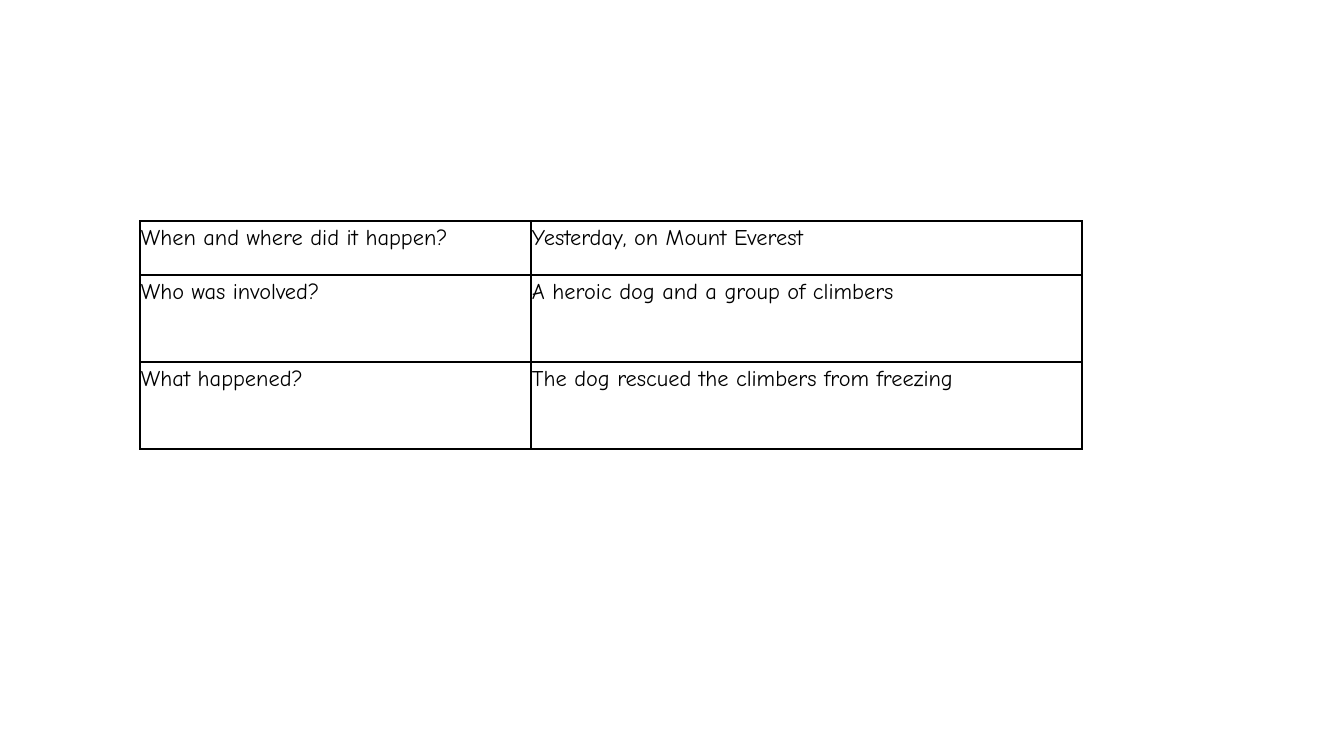
from typing import NamedTuple

from lxml import etree
from pptx import Presentation
from pptx.dml.color import RGBColor
from pptx.oxml.ns import qn
from pptx.util import Pt

EMU_PER_PX = 9144000 / 1344
BLACK = RGBColor(0x00, 0x00, 0x00)
FONT = "Comic Neue"
BORDER_SIDES = ("a:lnL", "a:lnR", "a:lnT", "a:lnB")
BLANK_LAYOUT = 6

SLIDE_WIDTH, SLIDE_HEIGHT = 1344, 756
TABLE_LEFT, TABLE_TOP = 140, 221
COLUMN_WIDTHS = (391, 551)
CELL_INSET = 1


class QuestionRow(NamedTuple):
    question: str
    answer: str
    height: int


ROWS = (
    QuestionRow("When and where did it happen?", "Yesterday, on Mount Everest", 54),
    QuestionRow("Who was involved?", "A heroic dog and a group of climbers", 87),
    QuestionRow("What happened?", "The dog rescued the climbers from freezing", 87),
)


def px(length: int) -> int:
    return round(length * EMU_PER_PX)


def add_borders(cell, color: RGBColor, width: int) -> None:
    properties = cell._tc.get_or_add_tcPr()
    for side in BORDER_SIDES:
        line = etree.SubElement(properties, qn(side), w=str(width))
        fill = etree.SubElement(line, qn("a:solidFill"))
        etree.SubElement(fill, qn("a:srgbClr"), val=str(color))


def fill_cell(cell, text: str) -> None:
    add_borders(cell, BLACK, Pt(1))
    cell.fill.background()
    cell.margin_left = cell.margin_right = px(CELL_INSET)
    cell.margin_top = cell.margin_bottom = px(CELL_INSET)
    para = cell.text_frame.paragraphs[0]
    para.text = text
    para.line_spacing = 1.15
    para.space_before = Pt(12)
    font = para.runs[0].font
    font.name = FONT
    font.size = Pt(12)
    font.color.rgb = BLACK


def add_question_table(slide, rows: tuple[QuestionRow, ...]) -> None:
    frame = slide.shapes.add_table(
        len(rows), len(COLUMN_WIDTHS), px(TABLE_LEFT), px(TABLE_TOP),
        px(sum(COLUMN_WIDTHS)), px(sum(row.height for row in rows)),
    )
    table = frame.table
    table.first_row = False
    table.horz_banding = False
    for column, width in zip(table.columns, COLUMN_WIDTHS):
        column.width = px(width)
    for table_row, row in zip(table.rows, rows):
        table_row.height = px(row.height)
        for cell, text in zip(table_row.cells, (row.question, row.answer)):
            fill_cell(cell, text)


def main() -> None:
    deck = Presentation()
    deck.slide_width = px(SLIDE_WIDTH)
    deck.slide_height = px(SLIDE_HEIGHT)
    slide = deck.slides.add_slide(deck.slide_layouts[BLANK_LAYOUT])
    add_question_table(slide, ROWS)
    deck.save("out.pptx")


if __name__ == "__main__":
    main()
